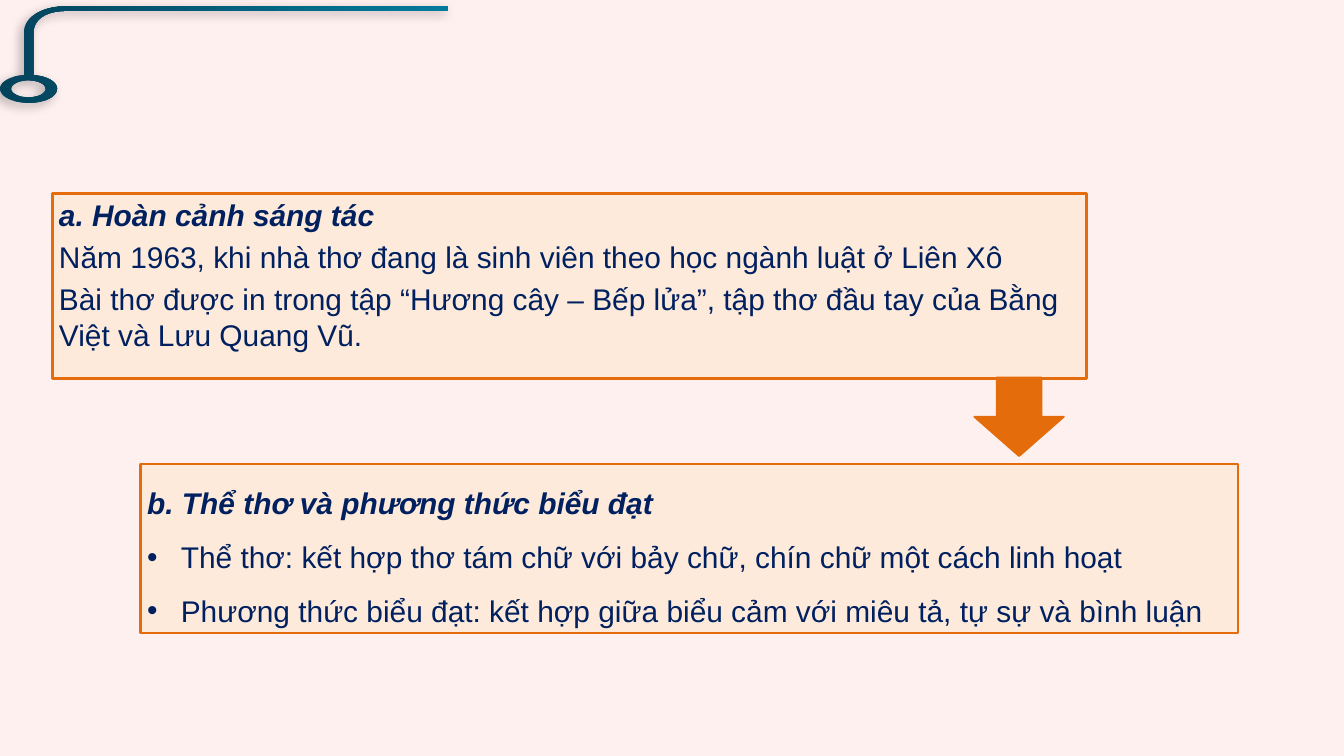
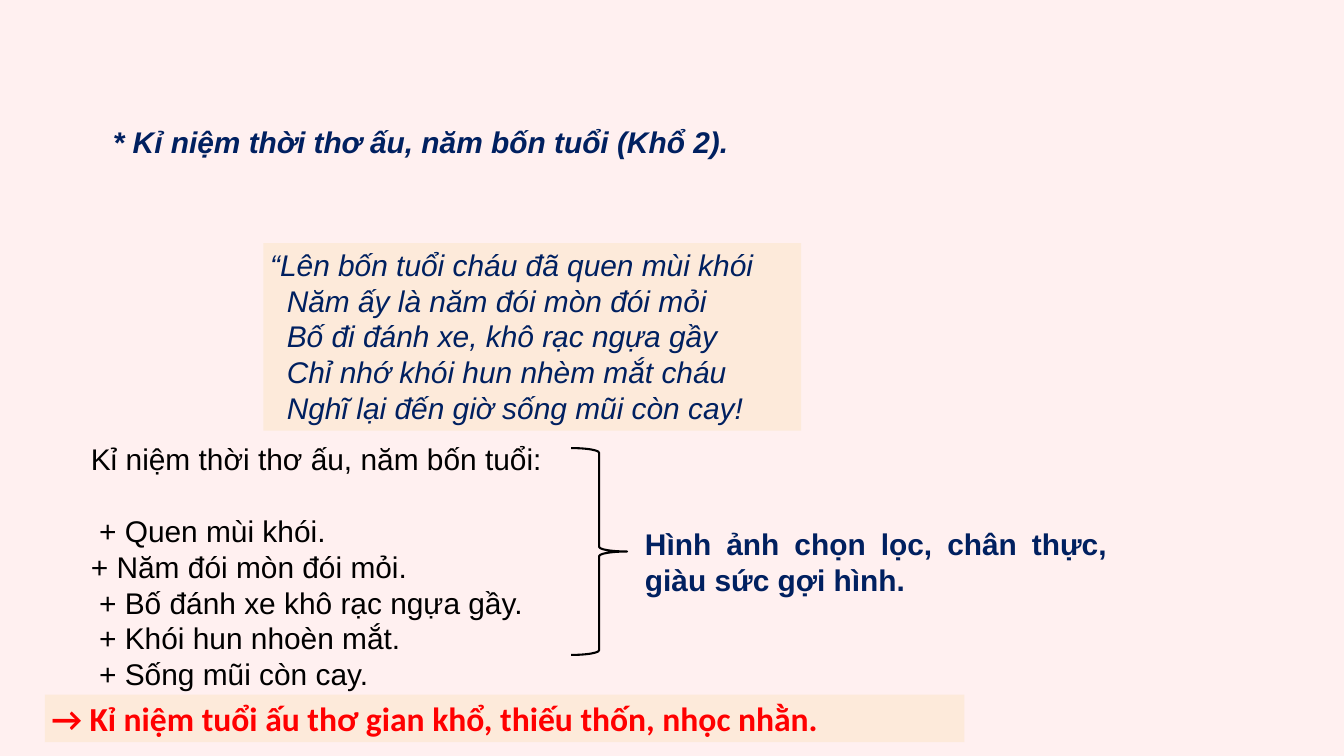
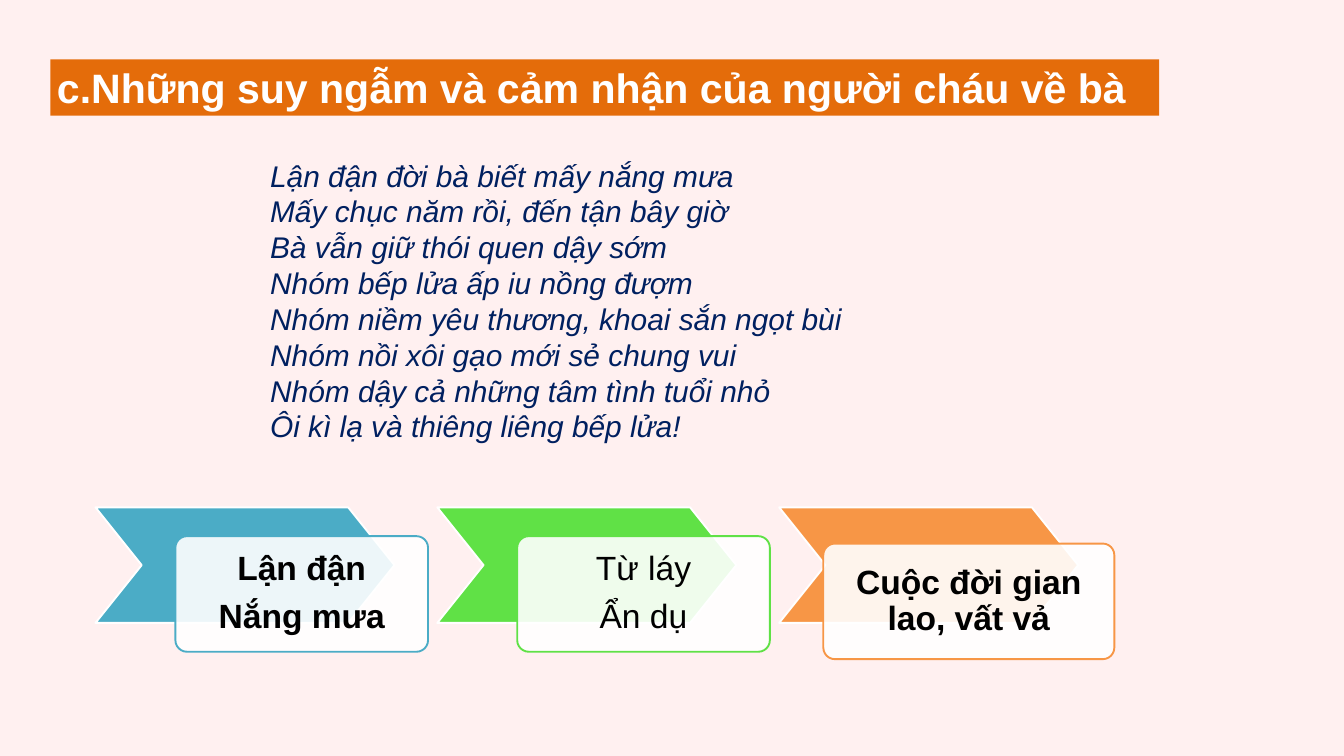
from dataclasses import dataclass
from math import cos, pi, sin
from typing import NamedTuple, Optional, Sequence

from lxml.etree import SubElement
from pptx import Presentation
from pptx.dml.color import RGBColor
from pptx.enum.shapes import MSO_SHAPE as Preset
from pptx.enum.text import MSO_ANCHOR as Anchor, MSO_AUTO_SIZE as AutoSize, PP_ALIGN as Align
from pptx.oxml.ns import qn
from pptx.presentation import Presentation as Deck
from pptx.shapes.base import BaseShape
from pptx.slide import Slide
from pptx.util import Cm, Pt


class TextStyle(NamedTuple):
    size: float
    color: str
    bold: bool = False
    italic: bool = False
    font: str = "Arial"


@dataclass(frozen=True)
class Theme:
    background: str = "FFF0F0"
    panel: str = "FDEADA"
    accent: str = "E46C0A"
    black: str = "000000"
    white: str = "FFFFFF"
    ornament_dark: str = "03435C"
    ornament_light: str = "037A9B"
    blue: str = "4BACC6"
    green: str = "60E146"
    orange: str = "F79646"
    banner: TextStyle = TextStyle(44, "FFFFFF", bold=True)
    heading: TextStyle = TextStyle(32, "002060", bold=True, italic=True)
    text: TextStyle = TextStyle(32, "002060")
    verse: TextStyle = TextStyle(32, "002060", italic=True)
    remark: TextStyle = TextStyle(32, "002060", bold=True)
    memory: TextStyle = TextStyle(32, "000000")
    conclusion: TextStyle = TextStyle(36, "FF0000", bold=True, font="Calibri")
    step: TextStyle = TextStyle(36, "000000")
    step_bold: TextStyle = TextStyle(36, "000000", bold=True)


THEME = Theme()


class Box(NamedTuple):
    left: float
    top: float
    width: float
    height: float

    def lengths(self) -> list[Cm]:
        return [Cm(value) for value in self]


class Line(NamedTuple):
    text: str
    style: TextStyle
    indent: float = 0
    bullet: bool = False
    after: float = 0


class ParagraphFormat(NamedTuple):
    align: Align = Align.LEFT
    spacing: float = 1.0
    before: float = 0


@dataclass(frozen=True)
class Step:
    lines: Sequence[str]
    color: str
    style: TextStyle
    card: Box


class Curve(NamedTuple):
    first: tuple[float, float]
    second: tuple[float, float]
    end: tuple[float, float]


PLAIN = ParagraphFormat()
CURVE_STEPS = 12
ORNAMENT_START = (1.27, 0.58)
ORNAMENT = [
    Curve((0.97, 0.79), (0.91, 1.07), (0.91, 1.24)),
    (0.91, 2.84),
    Curve((0.38, 2.87), (0, 3.1), (0, 3.35)),
    Curve((0, 3.66), (0.48, 3.89), (1.09, 3.89)),
    Curve((1.68, 3.89), (2.16, 3.66), (2.16, 3.35)),
    Curve((2.16, 3.1), (1.78, 2.87), (1.27, 2.84)),
    (1.27, 1.24),
    Curve((1.27, 0.99), (1.4, 0.41), (2.59, 0.41)),
    (16.94, 0.41),
    (16.94, 0.23),
    (2.59, 0.23),
    Curve((2.01, 0.23), (1.55, 0.36), ORNAMENT_START),
]

STEP_PITCH = 12.92
CHEVRON = Box(3.61, 19.18, 11.3, 4.37)
CARD = Box(6.63, 20.27, 9.55, 4.37)
STEPS = [
    Step(["Lận đận", "Nắng mưa"], THEME.blue, THEME.step_bold, CARD),
    Step(["Từ láy", "Ẩn dụ"], THEME.green, THEME.step, CARD._replace(left=CARD.left + STEP_PITCH)),
    Step(["Cuộc đời gian lao, vất vả"], THEME.orange, THEME.step_bold, Box(31.12, 20.55, 11, 4.37)),
]


def rgb(color: str) -> RGBColor:
    return RGBColor.from_string(color)


def paint(shape: BaseShape, fill: Optional[str] = None, line: Optional[str] = None, width: float = 2) -> None:
    if fill:
        shape.fill.solid()
        shape.fill.fore_color.rgb = rgb(fill)
    else:
        shape.fill.background()
    if line:
        shape.line.color.rgb = rgb(line)
        shape.line.width = Pt(width)
    else:
        shape.line.fill.background()


def add_preset(slide: Slide, preset: Preset, box: Box, fill: Optional[str] = None,
               line: Optional[str] = None, width: float = 2) -> BaseShape:
    shape = slide.shapes.add_shape(preset, *box.lengths())
    shape.shadow.inherit = False
    paint(shape, fill, line, width)
    return shape


def place(shape: BaseShape, box: Box) -> BaseShape:
    shape.left, shape.top, shape.width, shape.height = box.lengths()
    return shape


def write(shape: BaseShape, lines: Sequence[Line], layout: ParagraphFormat = PLAIN,
          anchor: Anchor = Anchor.TOP) -> None:
    frame = shape.text_frame
    frame.auto_size = AutoSize.NONE
    frame.word_wrap = True
    frame.vertical_anchor = anchor
    for index, line in enumerate(lines):
        paragraph = frame.add_paragraph() if index else frame.paragraphs[0]
        paragraph.text = line.text
        paragraph.alignment = layout.align
        paragraph.line_spacing = layout.spacing
        paragraph.space_before = Pt(layout.before)
        paragraph.space_after = Pt(line.after)
        properties = paragraph._p.get_or_add_pPr()
        properties.set("marL", str(Cm(line.indent)))
        properties.set("indent", str(-Cm(line.indent) if line.bullet else 0))
        if line.bullet:
            SubElement(properties, qn("a:buChar"), char="•")
        else:
            SubElement(properties, qn("a:buNone"))
        font = paragraph.font
        font.name = line.style.font
        font.size = Pt(line.style.size)
        font.bold = line.style.bold
        font.italic = line.style.italic
        font.color.rgb = rgb(line.style.color)


def add_text(slide: Slide, box: Box, lines: Sequence[Line], layout: ParagraphFormat = PLAIN) -> None:
    write(slide.shapes.add_textbox(*box.lengths()), lines, layout)


def trace_curve(start: tuple[float, float], curve: Curve) -> list[tuple[float, float]]:
    points = []
    for step in range(1, CURVE_STEPS + 1):
        t = step / CURVE_STEPS
        weights = ((1 - t) ** 3, 3 * t * (1 - t) ** 2, 3 * t * t * (1 - t), t ** 3)
        controls = (start, *curve)
        points.append(tuple(sum(w * point[axis] for w, point in zip(weights, controls)) for axis in (0, 1)))
    return points


def to_lengths(points: Sequence[tuple[float, float]]) -> list[tuple[Cm, Cm]]:
    return [(Cm(x), Cm(y)) for x, y in points]


def add_ornament(slide: Slide) -> None:
    outline = [ORNAMENT_START]
    for segment in ORNAMENT:
        outline += trace_curve(outline[-1], segment) if isinstance(segment, Curve) else [segment]
    angles = [2 * pi * step / 32 for step in range(32)]
    hole = to_lengths([(1.08 + 0.65 * cos(angle), 3.36 + 0.32 * sin(angle)) for angle in angles])
    outline = to_lengths(outline)
    builder = slide.shapes.build_freeform(*outline[0])
    builder.add_line_segments(outline[1:])
    builder.move_to(*hole[0])
    builder.add_line_segments(hole[1:])
    ornament = builder.convert_to_shape()
    ornament.line.fill.background()
    ornament.fill.gradient()
    ornament.fill.gradient_angle = 0
    for stop, color in zip(ornament.fill.gradient_stops, (THEME.ornament_dark, THEME.ornament_light)):
        stop.color.rgb = rgb(color)
    ornament.shadow.inherit = False
    effects = ornament._element.spPr.find(qn("a:effectLst"))
    shadow = SubElement(effects, qn("a:outerShdw"), blurRad=str(Pt(12)), dist=str(Pt(5)), dir="8100000")
    color = SubElement(shadow, qn("a:srgbClr"), val=THEME.black)
    SubElement(color, qn("a:alpha"), val="30000")


def add_step(slide: Slide, index: int, step: Step) -> None:
    box = CHEVRON._replace(left=CHEVRON.left + index * STEP_PITCH)
    chevron = add_preset(slide, Preset.CHEVRON, box, step.color, THEME.white)
    chevron.adjustments[0] = 0.4
    card = add_preset(slide, Preset.ROUNDED_RECTANGLE, step.card, THEME.white, step.color)
    card.adjustments[0] = 0.1
    color = card._element.spPr.find(qn("a:solidFill")).find(qn("a:srgbClr"))
    SubElement(color, qn("a:alpha"), val="90000")
    frame = card.text_frame
    frame.margin_left = frame.margin_right = frame.margin_top = frame.margin_bottom = Cm(0.7)
    lines = [Line(text, step.style, after=12.6) for text in step.lines]
    write(card, lines, ParagraphFormat(Align.CENTER, 0.9), Anchor.MIDDLE)


def build_background_slide(presentation: Deck) -> None:
    slide = presentation.slides.add_slide(presentation.slide_layouts[1])
    title = slide.shapes.title._element
    title.getparent().remove(title)
    add_ornament(slide)
    origin = add_preset(slide, Preset.RECTANGLE, Box(1.98, 7.32, 39.09, 6.98), THEME.panel, THEME.accent, 3)
    write(origin, [
        Line("a. Hoàn cảnh sáng tác", THEME.heading),
        Line("Năm 1963, khi nhà thơ đang là sinh viên theo học ngành luật ở Liên Xô", THEME.text),
        Line("Bài thơ được in trong tập “Hương cây – Bếp lửa”, tập thơ đầu tay của Bằng Việt "
             "và Lưu Quang Vũ.", THEME.text),
    ], ParagraphFormat(before=6.4))
    form = place(slide.placeholders[1], Box(5.31, 17.53, 41.48, 6.4))
    paint(form, THEME.panel, THEME.accent, 2.25)
    write(form, [
        Line("b. Thể thơ và phương thức biểu đạt", THEME.heading),
        Line("Thể thơ: kết hợp thơ tám chữ với bảy chữ, chín chữ một cách linh hoạt", THEME.text, 1.27, True),
        Line("Phương thức biểu đạt: kết hợp giữa biểu cảm với miêu tả, tự sự và bình luận",
             THEME.text, 1.27, True),
    ], ParagraphFormat(spacing=1.5))
    add_preset(slide, Preset.DOWN_ARROW, Box(36.83, 14.27, 3.38, 2.97), THEME.accent, THEME.accent)


def build_memory_slide(presentation: Deck) -> None:
    slide = presentation.slides.add_slide(presentation.slide_layouts[1])
    title = place(slide.shapes.title, Box(4.01, 4.55, 25.4, 1.63))
    write(title, [Line("* Kỉ niệm thời thơ ấu, năm bốn tuổi (Khổ 2).", THEME.heading)])
    verse = add_preset(slide, Preset.RECTANGLE, Box(9.96, 9.19, 20.32, 7.09), THEME.panel)
    verse_lines = [
        "Năm ấy là năm đói mòn đói mỏi",
        "Bố đi đánh xe, khô rạc ngựa gầy",
        "Chỉ nhớ khói hun nhèm mắt cháu",
        "Nghĩ lại đến giờ sống mũi còn cay!",
    ]
    write(verse, [Line("“Lên bốn tuổi cháu đã quen mùi khói", THEME.verse)]
          + [Line(text, THEME.verse, 0.63) for text in verse_lines])
    memories = place(slide.placeholders[1], Box(3.18, 16.54, 25.4, 8.46))
    write(memories, [
        Line("Kỉ niệm thời thơ ấu, năm bốn tuổi:", THEME.memory, after=38.4),
        Line("+ Quen mùi khói.", THEME.memory, 0.31),
        Line("+ Năm đói mòn đói mỏi.", THEME.memory),
        Line("+ Bố đánh xe khô rạc ngựa gầy.", THEME.memory, 0.31),
        Line("+ Khói hun nhoèn mắt.", THEME.memory, 0.31),
        Line("+ Sống mũi còn cay.", THEME.memory, 0.31),
    ])
    add_preset(slide, Preset.RIGHT_BRACE, Box(21.59, 16.94, 2.11, 7.82), line=THEME.black, width=2.25)
    add_text(slide, Box(24.13, 19.74, 17.98, 3),
             [Line("Hình ảnh chọn lọc, chân thực, giàu sức gợi hình.", THEME.remark)],
             ParagraphFormat(Align.JUSTIFY))
    conclusion = add_preset(slide, Preset.RECTANGLE, Box(1.7, 26.26, 34.75, 1.8), THEME.panel)
    write(conclusion, [Line("→ Kỉ niệm tuổi ấu thơ gian khổ, thiếu thốn, nhọc nhằn.", THEME.conclusion)])


def build_reflection_slide(presentation: Deck) -> None:
    slide = presentation.slides.add_slide(presentation.slide_layouts[5])
    title = place(slide.shapes.title, Box(1.9, 2.24, 41.91, 2.13))
    paint(title, THEME.accent)
    write(title, [Line("c.Những suy ngẫm và cảm nhận của người cháu về bà", THEME.banner)])
    verse_lines = [
        "Lận đận đời bà biết mấy nắng mưa",
        "Mấy chục năm rồi, đến tận bây giờ",
        "Bà vẫn giữ thói quen dậy sớm",
        "Nhóm bếp lửa ấp iu nồng đượm",
        "Nhóm niềm yêu thương, khoai sắn ngọt bùi",
        "Nhóm nồi xôi gạo mới sẻ chung vui",
        "Nhóm dậy cả những tâm tình tuổi nhỏ",
        "Ôi kì lạ và thiêng liêng bếp lửa!",
    ]
    add_text(slide, Box(9.96, 5.82, 23.29, 11.2), [Line(text, THEME.verse) for text in verse_lines])
    for index, step in enumerate(STEPS):
        add_step(slide, index, step)


def main() -> None:
    presentation = Presentation()
    presentation.slide_width, presentation.slide_height = Cm(50.8), Cm(28.58)
    background = presentation.slide_master.background.fill
    background.solid()
    background.fore_color.rgb = rgb(THEME.background)
    build_background_slide(presentation)
    build_memory_slide(presentation)
    build_reflection_slide(presentation)
    presentation.save("out.pptx")


if __name__ == "__main__":
    main()
